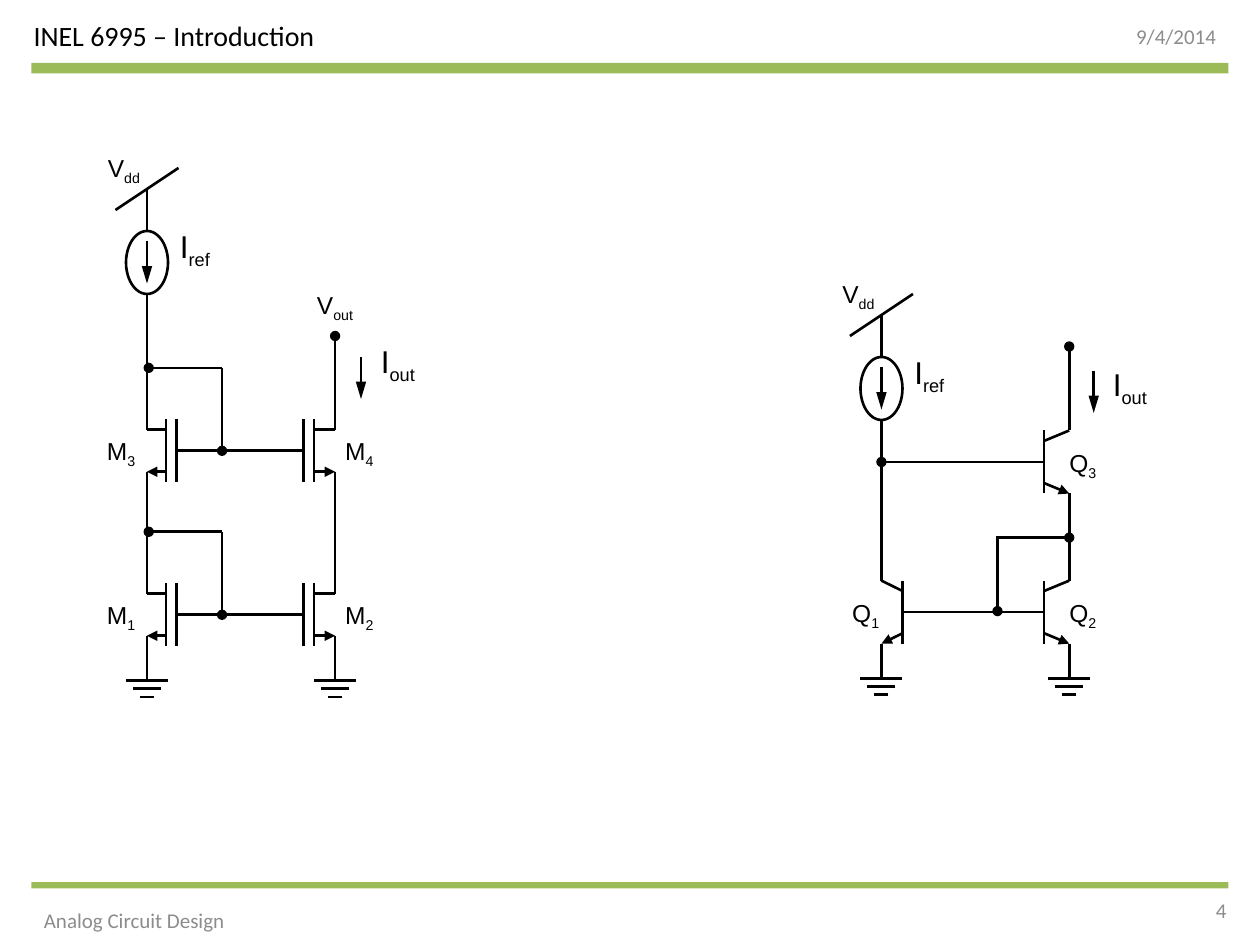
from dataclasses import dataclass
from math import copysign

from lxml.etree import SubElement
from pptx import Presentation
from pptx.dml.color import RGBColor
from pptx.enum.shapes import MSO_CONNECTOR, MSO_SHAPE
from pptx.enum.text import MSO_ANCHOR, MSO_AUTO_SIZE, PP_ALIGN
from pptx.oxml.ns import qn
from pptx.util import Pt


@dataclass(frozen=True)
class Theme:
    ink: RGBColor = RGBColor(0, 0, 0)
    muted: RGBColor = RGBColor(0x8C, 0x8C, 0x8C)
    accent: RGBColor = RGBColor(0x9B, 0xBB, 0x59)
    page_font: str = "Calibri"
    label_font: str = "Arial"
    title_size: int = 16
    footer_size: int = 12
    current_size: int = 18
    node_size: int = 14
    stroke: float = 1.5


class CircuitPage:
    """Draws circuit elements on one slide in a shared style, in points."""

    def __init__(self, deck, theme):
        self.theme = theme
        self.page = deck.slides.add_slide(deck.slide_layouts[5])
        self.canvas = self.page.shapes

    def start_circuit(self):
        self.canvas = self.page.shapes.add_group_shape().shapes

    def title(self, text, left, top, width, height):
        box = self.page.shapes.title
        box.left, box.top, box.width, box.height = map(Pt, (left, top, width, height))
        self.page_text(box, text, self.theme.title_size, self.theme.ink)

    def footer(self, text, left, top, width, align=PP_ALIGN.LEFT):
        box = self.page.shapes.add_textbox(Pt(left), Pt(top), Pt(width), Pt(28.8))
        self.page_text(box, text, self.theme.footer_size, self.theme.muted, align)

    def page_text(self, box, text, size, color, align=PP_ALIGN.LEFT):
        frame = box.text_frame
        frame.word_wrap = True
        frame.auto_size = MSO_AUTO_SIZE.NONE
        frame.vertical_anchor = MSO_ANCHOR.MIDDLE
        para = frame.paragraphs[0]
        para.text = text
        para.alignment = align
        self.format_font(para.font, self.theme.page_font, size, color)

    def format_font(self, font, name, size, color):
        font.name = name
        font.size = Pt(size)
        font.color.rgb = color

    def bar(self, top, height):
        shape = self.page.shapes.add_shape(
            MSO_SHAPE.RECTANGLE, Pt(18), Pt(top), Pt(684), Pt(height))
        shape.shadow.inherit = False
        shape.fill.solid()
        shape.fill.fore_color.rgb = self.theme.accent
        shape.line.fill.background()

    def label(self, symbol, subscript, left, top, width=31.7, size=None):
        size = size or self.theme.node_size
        height = 28.8 if size == self.theme.current_size else 24.5
        box = self.canvas.add_textbox(Pt(left), Pt(top), Pt(width), Pt(height))
        frame = box.text_frame
        frame.word_wrap = False
        frame.auto_size = MSO_AUTO_SIZE.SHAPE_TO_FIT_TEXT
        para = frame.paragraphs[0]
        self.format_font(para.font, self.theme.label_font, size, self.theme.ink)
        para.add_run().text = symbol
        span = para.add_run()
        span.text = subscript
        span.font._element.set("baseline", "-25000")

    def wire(self, x1, y1, x2, y2, end=None, length="med"):
        line = self.canvas.add_connector(
            MSO_CONNECTOR.STRAIGHT, Pt(x1), Pt(y1), Pt(x2), Pt(y2))
        line.line.color.rgb = self.theme.ink
        line.line.width = Pt(self.theme.stroke)
        properties = line.element.spPr
        if end:
            SubElement(properties.find(qn("a:ln")), qn("a:tailEnd"),
                       type=end, w="med", len=length)
        SubElement(properties, qn("a:effectLst"))

    def ground(self, x, y):
        self.wire(x, y - 8.6, x, y)
        for step, half in enumerate((12, 8, 4)):
            self.wire(x + half, y + 4.6 * step, x - half, y + 4.6 * step)

    def current_source(self, x, y):
        self.wire(x + 18, y - 12, x - 18, y + 12)
        self.wire(x, y, x, y + 24)
        circle = self.canvas.add_shape(
            MSO_SHAPE.OVAL, Pt(x - 12), Pt(y + 24), Pt(24), Pt(36))
        circle.shadow.inherit = False
        circle.fill.background()
        circle.line.color.rgb = self.theme.ink
        circle.line.width = Pt(self.theme.stroke)
        self.wire(x, y + 30, x, y + 54, "triangle", "lg")
        self.wire(x, y + 60, x, y + 72)
        self.label("V", "dd", x - 29.5, y - 24, 34.6)
        self.label("I", "ref", x + 11.7, y + 18, 33.8, self.theme.current_size)

    def output_current(self, x, y, label_left, label_top):
        self.wire(x, y, x, y + 24, "triangle", "lg")
        self.label("I", "out", label_left, label_top, 36.7, self.theme.current_size)

    def mosfet(self, x, y, reach, number, label_shift):
        channel = x + reach
        gate = channel + copysign(5.8, reach)
        self.wire(x, y - 30, x, y - 12)
        self.wire(x, y + 12, x, y + 30)
        self.wire(x, y - 12, channel, y - 12)
        self.wire(channel, y + 12, x, y + 12, "triangle")
        for plate in (channel, gate):
            self.wire(plate, y - 18, plate, y + 18)
        self.wire(gate, y, gate + copysign(17, reach), y)
        self.label("M", number, x + label_shift, y - 12)

    def bipolar(self, x, y, reach, number, label_shift):
        base = x + reach
        self.wire(x, y - 30, x, y - 18)
        self.wire(x, y + 18, x, y + 30)
        self.wire(x, y - 18, base, y - 12)
        self.wire(base, y + 12, x, y + 18, "triangle")
        self.wire(base, y - 18, base, y + 18)
        self.wire(base, y, base + copysign(20, reach), y)
        self.label("Q", number, x + label_shift, y - 11.8)


def draw_mosfet_mirror(sketch):
    left, right, tap = 84, 191.5, 126.9
    sketch.start_circuit()
    sketch.current_source(left, 108)
    for gate, left_number, right_number in ((257.6, "3", "4"), (351.3, "1", "2")):
        sketch.mosfet(left, gate, 10.9, left_number, -30)
        sketch.mosfet(right, gate, -12.1, right_number, -1.3)
        sketch.wire(159, gate, 117, gate)
        sketch.wire(tap, gate - 47.4, tap, gate, "oval")
        sketch.wire(tap, gate - 47.4, left + 1, gate - 47.4, "oval")
    sketch.wire(left, 174, left, 229)
    for x in (left, right):
        sketch.wire(x, 283, x, 322)
        sketch.ground(x, 389)
    sketch.wire(right, 228, right, 192, "oval")
    sketch.label("V", "out", 174, 162, 36.7)
    sketch.output_current(206.3, 204, 210.5, 192)


def draw_bipolar_mirror(sketch):
    left, right, tap = 503.7, 611, 570
    sketch.start_circuit()
    sketch.current_source(left, 180)
    sketch.bipolar(left, 349.8, 12.2, "1", -23.8)
    sketch.bipolar(right, 349.8, -14.5, "2", -7)
    sketch.bipolar(right, 264, -14.5, "3", -7)
    for x in (left, right):
        sketch.ground(x, 387.8)
    sketch.wire(left, 249, left, 321)
    sketch.wire(577, 349.8, 523, 349.8)
    sketch.wire(tap, 306, tap, 349.2, "oval")
    sketch.wire(tap, 307.2, right, 307.2, "oval")
    sketch.wire(577, 264, left, 264, "oval")
    sketch.wire(right, 294, right, 325)
    sketch.wire(right, 234, right, 198, "oval")
    sketch.output_current(625, 212, 628.8, 205)


def main():
    deck = Presentation()
    deck.slide_width, deck.slide_height = Pt(720), Pt(540)
    sketch = CircuitPage(deck, Theme())
    sketch.bar(36, 6)
    sketch.bar(504, 3.6)
    sketch.title("INEL 6995 – Introduction", 12, 6, 240, 28.8)
    sketch.footer("9/4/2014", 534, 6, 168, PP_ALIGN.RIGHT)
    sketch.footer("Analog Circuit Design", 18, 511.2, 126)
    sketch.footer("4", 540, 505.5, 168, PP_ALIGN.RIGHT)
    draw_mosfet_mirror(sketch)
    draw_bipolar_mirror(sketch)
    deck.save("out.pptx")


if __name__ == "__main__":
    main()
